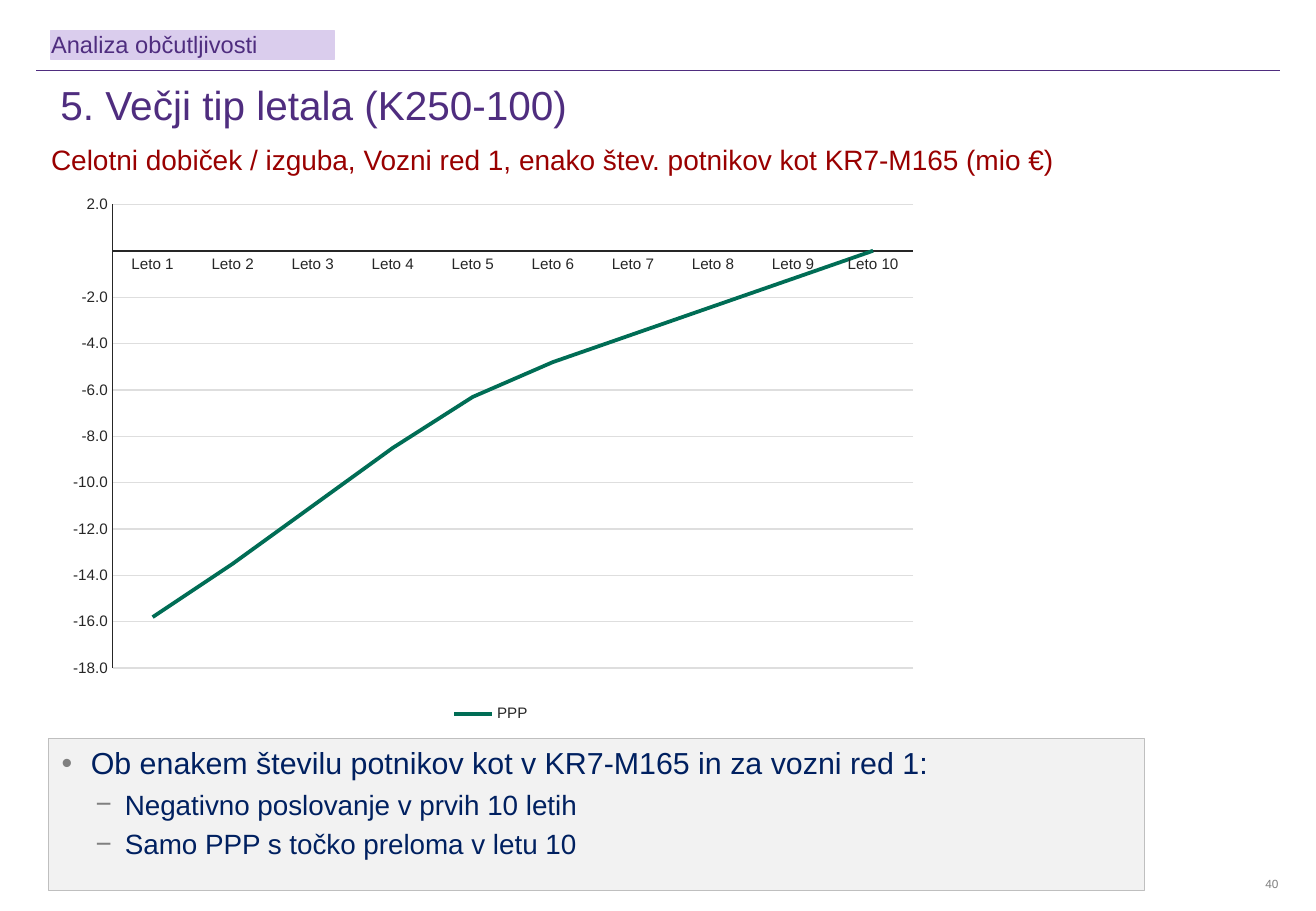
from lxml.etree import SubElement
from pptx import Presentation
from pptx.chart.data import CategoryChartData as ChartData
from pptx.dml.color import RGBColor as RGB
from pptx.enum.chart import XL_CHART_TYPE as CT, XL_LEGEND_POSITION as LP, XL_TICK_MARK as TM
from pptx.enum.shapes import MSO_CONNECTOR as MC, MSO_SHAPE as MS
from pptx.enum.text import MSO_ANCHOR as MA, PP_ALIGN as PA
from pptx.oxml import parse_xml
from pptx.oxml.ns import nsdecls, qn
from pptx.util import Inches, Pt

PURPLE = RGB(0x4F, 0x2D, 0x7F)
LILAC = RGB(0xDA, 0xCD, 0xED)
RED = RGB(0x99, 0x00, 0x00)
NAVY = RGB(0x00, 0x20, 0x60)
GREEN = RGB(0x00, 0x6D, 0x55)
INK = RGB(0x26, 0x26, 0x26)
GRID = RGB(0xDE, 0xDE, 0xDE)
PALE = RGB(0xF2, 0xF2, 0xF2)
EDGE = RGB(0xBF, 0xBF, 0xBF)
GRAY = RGB(0x7F, 0x7F, 0x7F)
BULLET = RGB(0x80, 0x80, 0x80)

FLUSH = dict.fromkeys(("margin_left", "margin_top", "margin_right", "margin_bottom"), 0)


def apply(obj, values):
    for name, value in values.items():
        setattr(obj, name, value)


class Deck:
    font = "Arial"

    def __init__(self, width, height):
        self.prs = Presentation()
        apply(self.prs, {"slide_width": Inches(width), "slide_height": Inches(height)})
        self.s = self.prs.slides.add_slide(self.prs.slide_layouts[6])

    def x(self, share):
        return round(self.prs.slide_width * share / 100)

    def y(self, share):
        return round(self.prs.slide_height * share / 100)

    def box(self, left, top, width, height):
        return self.x(left), self.y(top), self.x(width), self.y(height)

    def style(self, font, size, color):
        apply(font, {"name": self.font, "size": Pt(size)})
        font.color.rgb = color

    def stroke(self, line, color, width):
        line.color.rgb = color
        line.width = Pt(width)

    def fill_text(self, p, text, size, color, **fmt):
        apply(p, {"alignment": PA.LEFT, **fmt})
        r = p.add_run()
        r.text = text
        self.style(r.font, size, color)

    def text(self, box, text, size, color, frame=FLUSH, **fmt):
        tf = self.s.shapes.add_textbox(*self.box(*box)).text_frame
        apply(tf, {"word_wrap": True, **frame})
        self.fill_text(tf.paragraphs[0], text, size, color, **fmt)

    def panel(self, box, fill, edge, width, **frame):
        sp = self.s.shapes.add_shape(MS.RECTANGLE, *self.box(*box))
        sp.shadow.inherit = False
        sp.fill.solid()
        sp.fill.fore_color.rgb = fill
        self.stroke(sp.line, edge, width)
        apply(sp.text_frame, {"word_wrap": True, "vertical_anchor": MA.TOP, **frame})
        return sp.text_frame

    def bullets(self, tf, items, color):
        for i, (mark, indent, size, text) in enumerate(items):
            p = tf.add_paragraph() if i else tf.paragraphs[0]
            pPr = p._p.get_or_add_pPr()
            pPr.set("marL", str(Inches(indent)))
            pPr.set("indent", str(Inches(-0.24)))
            SubElement(SubElement(pPr, qn("a:buClr")), qn("a:srgbClr")).set("val", str(BULLET))
            SubElement(pPr, qn("a:buFont")).set("typeface", self.font)
            SubElement(pPr, qn("a:buChar")).set("char", mark)
            self.fill_text(p, text, size, color, space_before=Pt(3.7 if i else 0))

    def rule(self, left, right, top, color, width):
        c = self.s.shapes.add_connector(MC.STRAIGHT, self.x(left), self.y(top), self.x(right), self.y(top))
        self.stroke(c.line, color, width)
        SubElement(c._element.spPr, qn("a:effectLst"))

    def line_chart(self, box, cats, name, values, color, plot):
        data = ChartData(number_format="0.0")
        data.categories = cats
        data.add_series(name, values)
        chart = self.s.shapes.add_chart(CT.LINE, *self.box(*box), data).chart
        self.style(chart.font, 10, INK)
        apply(chart, {"has_title": False, "has_legend": True})
        apply(chart.legend, {"position": LP.BOTTOM, "include_in_layout": False})
        self.style(chart.legend.font, 9, INK)
        for axis in (chart.category_axis, chart.value_axis):
            apply(axis, {"major_tick_mark": TM.NONE, "minor_tick_mark": TM.NONE})
            self.style(axis.tick_labels.font, 9, INK)
            self.stroke(axis.format.line, INK, 1)
        axis = chart.value_axis
        apply(axis, {"minimum_scale": -18, "maximum_scale": 2, "major_unit": 2, "has_major_gridlines": True})
        self.stroke(axis.major_gridlines.format.line, GRID, 0.75)
        apply(axis.tick_labels, {"number_format": '#,##0.0;\\-#,##0.0;" "', "number_format_is_linked": False})
        chart.plots[0].vary_by_categories = False
        ser = chart.plots[0].series[0]
        ser.smooth = False
        self.stroke(ser.format.line, color, 2.25)
        self.place_plot(chart, plot)

    def place_plot(self, chart, plot):
        area = chart._chartSpace.find(".//" + qn("c:plotArea"))
        for old in area.findall(qn("c:layout")):
            area.remove(old)
        layout = parse_xml(f"<c:layout {nsdecls('c')}/>")
        manual = SubElement(layout, qn("c:manualLayout"))
        parts = {"layoutTarget": "inner", "xMode": "edge", "yMode": "edge", **dict(zip("xywh", plot))}
        for tag, value in parts.items():
            SubElement(manual, qn("c:" + tag)).set("val", str(value))
        area.insert(0, layout)


def main():
    d = Deck(10.83, 7.5)
    d.rule(2.77, 97.23, 7.73, PURPLE, 0.25)
    d.text((96.03, 96.27, 1.11, 1.6), "40", 7, GRAY, {**FLUSH, "word_wrap": False}, alignment=PA.RIGHT)
    d.text((3.69, 9.07, 93.63, 5.33), "5. Večji tip letala (K250-100)", 24, PURPLE,
           {"vertical_anchor": MA.MIDDLE}, line_spacing=0.9)
    d.text((3.88, 15.6, 82.27, 3.73),
           "Celotni dobiček / izguba, Vozni red 1, enako štev. potnikov kot KR7-M165 (mio €)", 16.6, RED)
    notes = d.panel((3.69, 81.07, 83.29, 16.67), PALE, EDGE, 0.25)
    d.bullets(notes, [
        ("•", 0.25, 18, "Ob enakem številu potnikov kot v KR7-M165 in za vozni red 1:"),
        ("−", 0.53, 16.5, "Negativno poslovanje v prvih 10 letih"),
        ("−", 0.53, 16.5, "Samo PPP s točko preloma v letu 10"),
    ], NAVY)
    tag = d.panel((3.88, 3.33, 21.51, 3.2), LILAC, LILAC, 0.75, **FLUSH)
    d.fill_text(tag.paragraphs[0], "Analiza občutljivosti", 14, PURPLE)
    d.line_chart((3.88, 20.67, 66.85, 59.2), [f"Leto {n}" for n in range(1, 11)], "PPP",
                 (-15.8, -13.5, -11, -8.5, -6.3, -4.8, -3.6, -2.4, -1.2, 0), GREEN,
                 (0.07, 0.03, 0.91, 0.86))
    d.prs.save("out.pptx")


if __name__ == "__main__":
    main()
